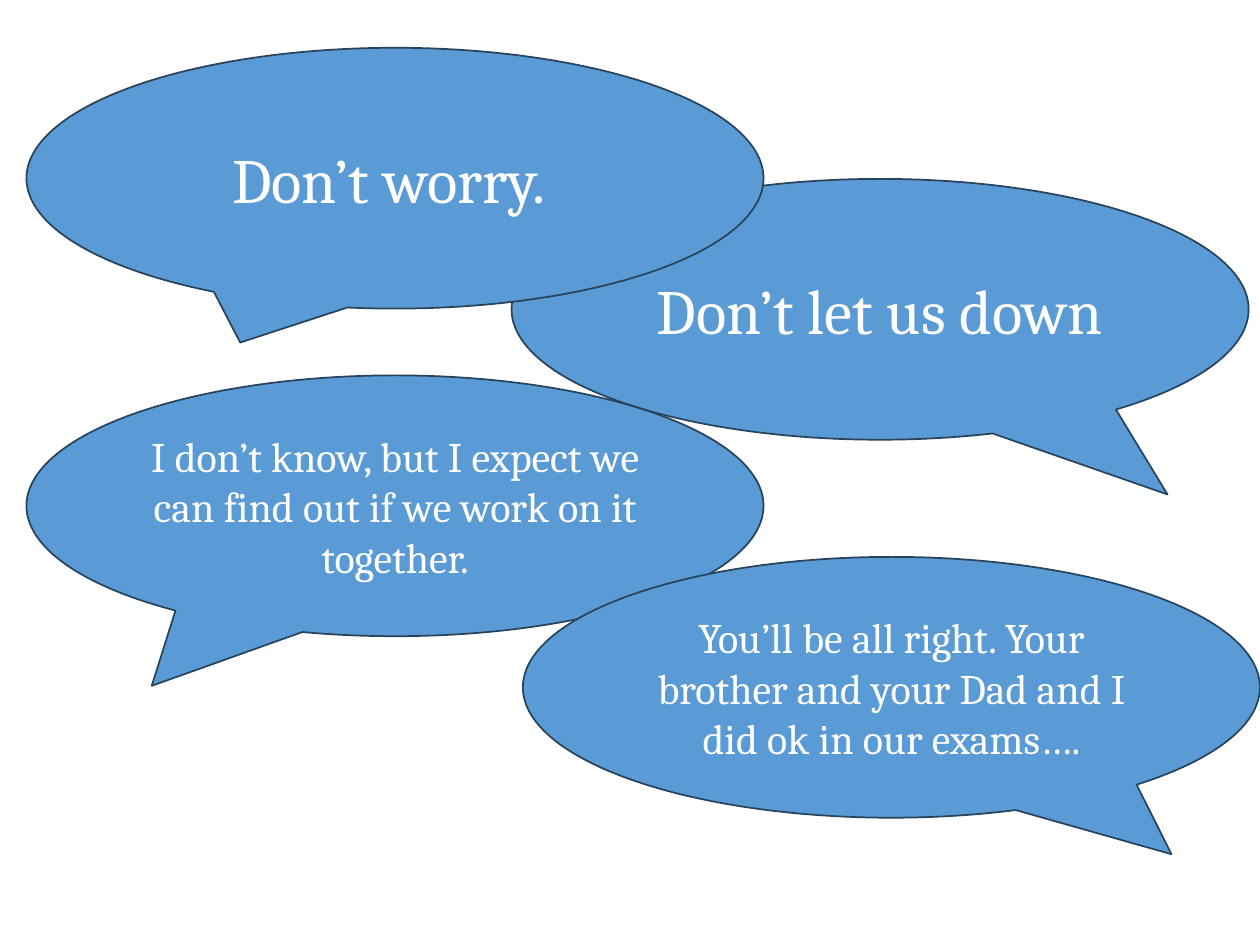
import pptx
import pptx.util
import pptx.dml.color
import pptx.enum.shapes
import pptx.enum.text

Inches = pptx.util.Inches
Pt = pptx.util.Pt


def tint(code):
    return pptx.dml.color.RGBColor.from_string(code)


class Deck:
    font = "Cambria"
    fill = "5B9BD5"
    edge = "28445D"
    ink = "FFFFFF"
    width, height = 5.85, 2.07

    def __init__(self, slide):
        self.slide = slide

    def bubble(self, left, top, tail, text, size):
        """Add a speech bubble; tail is the tip's offset from the centre, in shares of the size."""
        shape = self.slide.shapes.add_shape(
            pptx.enum.shapes.MSO_SHAPE.OVAL_CALLOUT,
            Inches(left), Inches(top), Inches(self.width), Inches(self.height))
        shape.shadow.inherit = False
        shape.adjustments[0], shape.adjustments[1] = tail
        shape.fill.solid()
        shape.fill.fore_color.rgb = tint(self.fill)
        shape.line.color.rgb = tint(self.edge)
        shape.line.width = Pt(1)
        frame = shape.text_frame
        frame.word_wrap = True
        frame.vertical_anchor = pptx.enum.text.MSO_ANCHOR.MIDDLE
        para = frame.paragraphs[0]
        para.alignment = pptx.enum.text.PP_ALIGN.CENTER
        run = para.add_run()
        run.text = text
        run.font.name = self.font
        run.font.size = Pt(size)
        run.font.color.rgb = tint(self.ink)


def main():
    show = pptx.Presentation()
    show.slide_width, show.slide_height = Inches(10), Inches(7.5)
    deck = Deck(show.slides.add_slide(show.slide_layouts[6]))
    left = 0.21
    large, small = 36, 24
    deck.bubble(4.06, 1.42, (0.39, 0.71), "Don’t let us down", large)
    deck.bubble(left, 2.98, (-0.33, 0.69),
                "I don’t know, but I expect we can find out if we work on it together.", small)
    deck.bubble(4.15, 4.42, (0.38, 0.64),
                "You’ll be all right. Your brother and your Dad and I did ok in our exams….", small)
    deck.bubble(left, 0.38, (-0.21, 0.63), "Don’t worry. ", large)
    show.save("out.pptx")


if __name__ == "__main__":
    main()
